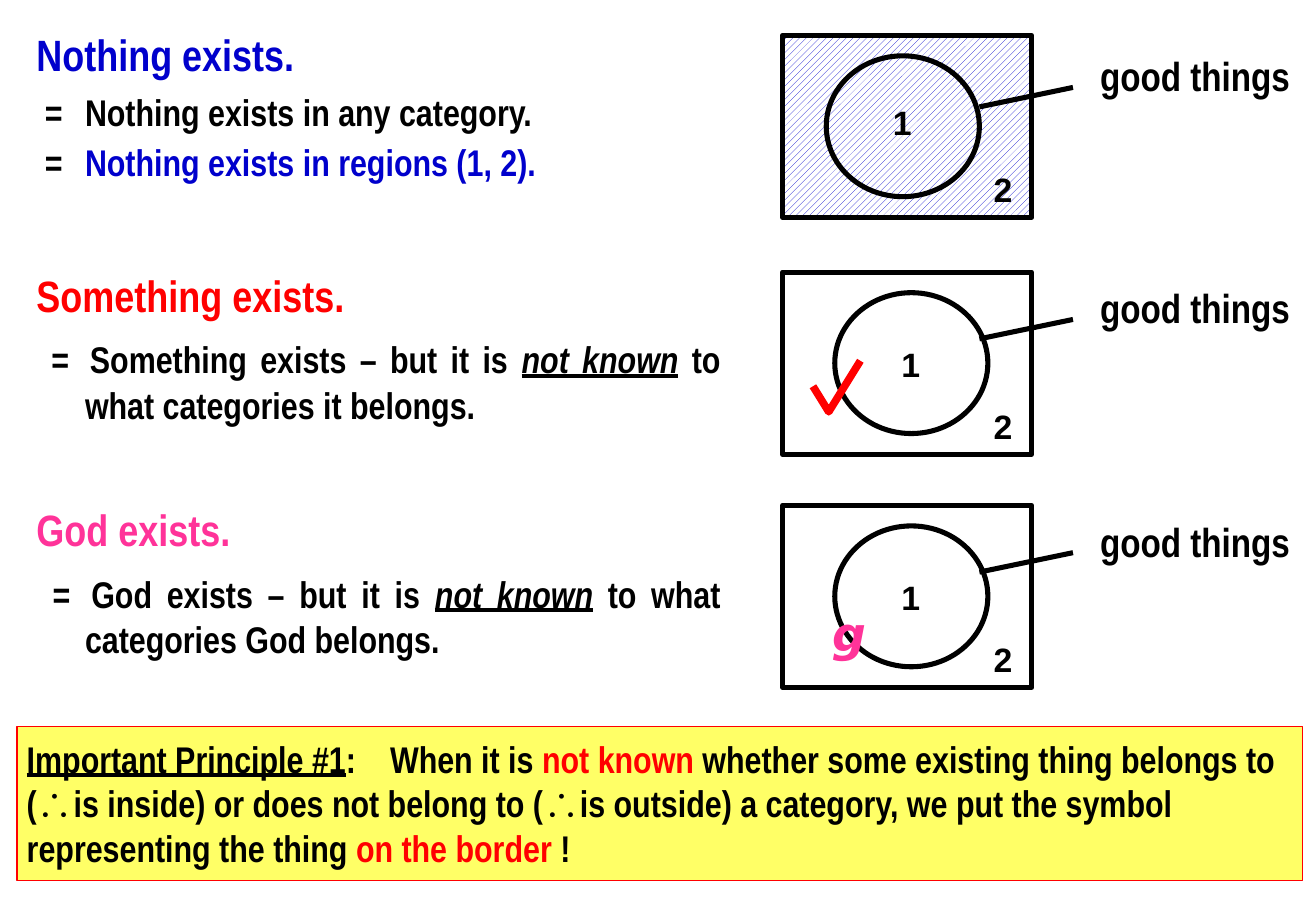
import lxml.etree
import pptx
import pptx.dml.color
import pptx.enum.dml
import pptx.enum.shapes
import pptx.enum.text
import pptx.oxml.ns
import pptx.util

Inches, Pt = pptx.util.Inches, pptx.util.Pt
RGBColor = pptx.dml.color.RGBColor
SHAPE = pptx.enum.shapes.MSO_SHAPE
ALIGN = pptx.enum.text.PP_ALIGN

BLACK = RGBColor(0x00, 0x00, 0x00)
WHITE = RGBColor(0xFF, 0xFF, 0xFF)
BLUE = RGBColor(0x00, 0x00, 0xCC)
RED = RGBColor(0xFF, 0x00, 0x00)
PINK = RGBColor(0xFF, 0x33, 0x99)
YELLOW = RGBColor(0xFF, 0xFF, 0x66)


def add_node(parent, tag, **attrs):
    return lxml.etree.SubElement(parent, pptx.oxml.ns.qn(tag), attrs)


class Board:
    font = "Arial Narrow"
    digit = "Arial"
    stroke = 3

    def __init__(self, slide):
        self.slide = slide
        self.shapes = slide.shapes

    def add_text(self, para, text, size, color=BLACK, font=None,
                 italic=False, under=False):
        run = para.add_run()
        run.text = text
        face = run.font
        face.name, face.size, face.bold = font or self.font, Pt(size), True
        face.italic, face.underline = italic, under
        face.color.rgb = color

    def box(self, left, top, width, height, inset=None):
        frame = self.shapes.add_textbox(
            Inches(left), Inches(top), Inches(width), Inches(height)).text_frame
        frame.word_wrap = True
        if inset is not None:
            self.pad(frame, inset)
        return frame

    def pad(self, frame, inset):
        frame.margin_left = frame.margin_right = Inches(inset)
        frame.margin_top = frame.margin_bottom = Inches(inset)

    def hang(self, para, align=ALIGN.JUSTIFY, before=0):
        """Give a paragraph the hanging indent of the equals signs."""
        props = para._p.get_or_add_pPr()
        props.set("marL", str(Inches(0.4)))
        props.set("indent", str(Inches(-0.4)))
        para.alignment = align
        para.space_before = Pt(before)
        return para

    def claim(self, top, width, height, text, color):
        """Add a coloured heading; return its frame for the lines below."""
        frame = self.box(0.3, top, width, height, 0)
        self.add_text(self.hang(frame.paragraphs[0]), text, 26, color)
        return frame

    def unknown(self, top, head, color, start, end):
        frame = self.claim(top, 5.63, 1.32, head, color)
        para = self.hang(frame.add_paragraph(), before=5.2)
        self.add_text(para, " ", 26)
        self.add_text(para, "=\t" + start, 22)
        self.add_text(para, "not known", 22, italic=True, under=True)
        self.add_text(para, end, 22)

    def mark(self, left, top, text, size=20, color=BLACK, font=None,
             italic=False):
        frame = self.box(left, top, 0.6, 0.43)
        self.add_text(frame.paragraphs[0], text, size, color,
                      font or self.digit, italic)

    def shape(self, kind, left, top, width, height, color=BLACK, stroke=None):
        item = self.shapes.add_shape(
            kind, Inches(left), Inches(top), Inches(width), Inches(height))
        self.outline(item, color, stroke or self.stroke)
        return item

    def outline(self, item, color, stroke):
        item.shadow.inherit = False
        item.fill.background()
        item.line.color.rgb = color
        item.line.width = Pt(stroke)

    def line(self, left, top, right, bottom):
        item = self.shapes.add_connector(
            pptx.enum.shapes.MSO_CONNECTOR.STRAIGHT,
            Inches(left), Inches(top), Inches(right), Inches(bottom))
        item.line.color.rgb = BLACK
        item.line.width = Pt(self.stroke)
        add_node(item._element.spPr, "a:effectLst")

    def venn(self, top, ring, label, one, hatch=False):
        """Draw a framed circle; ring is its left edge, label and one are tops."""
        frame = self.shape(SHAPE.RECTANGLE, 6.44, top, 2.05, 1.5)
        if hatch:
            frame.fill.patterned()
            frame.fill.pattern = pptx.enum.dml.MSO_PATTERN.WIDE_UPWARD_DIAGONAL
            frame.fill.fore_color.rgb = BLUE
            frame.fill.back_color.rgb = WHITE
        self.shape(SHAPE.OVAL, ring, top + 0.17, 1.26, 1.16)
        self.line(8.83, label + 0.3, 8.06, label + 0.46)
        para = self.box(8.79, label, 2.09, 0.47).paragraphs[0]
        para.alignment, para.line_spacing = ALIGN.CENTER, 0.9
        self.add_text(para, "good things", 24)
        self.mark(ring + 0.45, one, "1")
        self.mark(8.08, top + 1.05, "2")

    def check(self, points, color):
        first, *rest = [(Inches(x), Inches(y)) for x, y in points]
        tick = self.shapes.build_freeform(*first)
        tick.add_line_segments(rest, close=False)
        self.outline(tick.convert_to_shape(), color, 4.5)

    def rule(self, parts):
        item = self.shape(SHAPE.RECTANGLE, 0.14, 5.98, 10.58, 1.27, RED, 0.75)
        item.fill.solid()
        item.fill.fore_color.rgb = YELLOW
        frame = item.text_frame
        frame.word_wrap = True
        frame.vertical_anchor = pptx.enum.text.MSO_ANCHOR.TOP
        self.pad(frame, 0.08)
        para = frame.paragraphs[0]
        para.alignment = ALIGN.LEFT
        tabs = add_node(para._p.get_or_add_pPr(), "a:tabLst")
        add_node(tabs, "a:tab", pos=str(Inches(2.99)), algn="l")
        for text, color, under in parts:
            self.add_text(para, text, 22, color, under=under)


def main():
    deck = pptx.Presentation()
    deck.slide_width, deck.slide_height = Inches(10.83), Inches(7.5)
    board = Board(deck.slides.add_slide(deck.slide_layouts[6]))

    frame = board.claim(0.23, 4.86, 1.31, "Nothing exists.", BLUE)
    para = board.hang(frame.add_paragraph(), before=5.5)
    board.add_text(para, " =\tNothing exists in any category.", 22)
    para = board.hang(frame.add_paragraph(), ALIGN.LEFT, 3.3)
    board.add_text(para, " =\t", 22)
    board.add_text(para, "Nothing exists in regions (1, 2).", 22, BLUE)
    board.venn(0.29, 6.8, 0.42, 0.79, hatch=True)

    board.unknown(2.21, "Something exists.", RED,
                  "Something exists – but it is ",
                  " to what categories it belongs.")
    board.venn(2.24, 6.87, 2.33, 2.78)
    board.check([(6.69, 3.18), (6.82, 3.39), (7.08, 2.97)], RED)

    board.unknown(4.14, "God exists.", PINK, "God exists – but it is ",
                  " to what categories God belongs.")
    board.venn(4.16, 6.87, 4.25, 4.7)
    board.mark(6.75, 4.93, "g", 28, PINK, "DejaVu Sans", True)

    board.rule([
        ("Important Principle #1", BLACK, True),
        (":\tWhen it is ", BLACK, False),
        ("not known", RED, False),
        (" whether some existing thing belongs to (∴is inside) or does not "
         "belong to (∴is outside) a category, we put the symbol representing "
         "the thing ", BLACK, False),
        ("on the border", RED, False),
        (" !", BLACK, False),
    ])
    deck.save("out.pptx")


if __name__ == "__main__":
    main()
